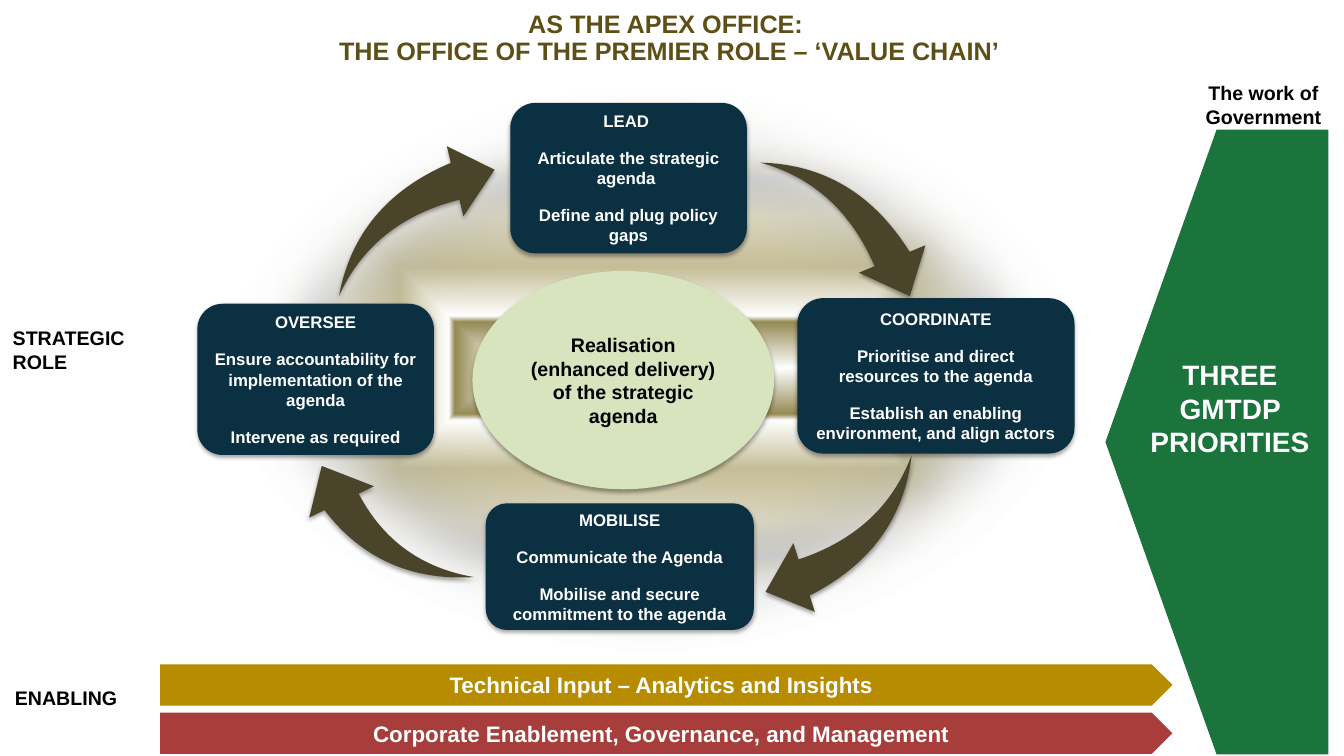
"""Build the value chain slide of the Office of the Premier."""
from dataclasses import dataclass

from lxml import etree
from pptx import Presentation
from pptx import util as u
from pptx.dml.color import RGBColor
from pptx.enum import shapes, text
from pptx.oxml import ns

SHAPE = shapes.MSO_SHAPE
CENTER = text.PP_ALIGN.CENTER
LEFT = text.PP_ALIGN.LEFT


@dataclass(frozen=True)
class Theme:
    font: str = "Arial"
    white: str = "FFFFFF"
    black: str = "000000"
    title: str = "5E4F16"
    role: str = "0B3041"
    goal: str = "D7E4BD"
    arrow: str = "4A452A"
    government: str = "1A743C"
    technical: str = "B88C00"
    corporate: str = "A73E3B"
    role_size: int = 12
    label_size: int = 14
    bar_size: int = 16
    title_size: int = 18
    priority_size: int = 20
    glow: tuple = ((0, "FFFFFF"), (16, "948A54"), (18, "FFFFFF"), (35, "C4BD97"),
                   (53, "DDD9C3"), (66, "CFCFCF"), (69, "DDD9C3"), (79, "FFFFFF"),
                   (97, "C4BD97"))


THEME = Theme()

ROLES = (
    ((141, 217, 169, 108), ("OVERSEE", "Ensure accountability for implementation of the agenda",
                            "Intervene as required")),
    ((364.5, 73.5, 169, 107.5), ("LEAD ", "Articulate the strategic agenda ",
                                 "Define and plug policy gaps")),
    ((569.5, 213, 198, 111), ("COORDINATE", "Prioritise and direct resources to the agenda",
                              "Establish an enabling environment, and align actors")),
    ((347, 359.5, 191.5, 90.5), ("MOBILISE", "Communicate the Agenda",
                                 "Mobilise and secure commitment to the agenda")),
)

ARROWS = (
    ((546, 112.5, 121, 97), 254),
    ((540.5, 335.5, 121, 97), 349.1),
    ((236, 107.5, 121, 97), 173.2),
    ((219, 327.5, 111, 97), 70.6),
)

BARS = (
    (474.5, THEME.technical, "Technical Input – Analytics and Insights"),
    (509, THEME.corporate, "Corporate Enablement, Governance, and Management"),
)


def points(place):
    return [u.Pt(length) for length in place]


def add_element(parent, tag, **attributes):
    element = etree.SubElement(parent, ns.qn(tag))
    for name, value in attributes.items():
        element.set(name, str(value))
    return element


def add_color(parent, color, alpha=None):
    element = add_element(parent, "a:srgbClr", val=color)
    if alpha is not None:
        add_element(element, "a:alpha", val=alpha * 1000)


def add_shadow(shape, alpha=35, blur=3.1, distance=1.8):
    effects = shape._element.spPr.find(ns.qn("a:effectLst"))
    shadow = add_element(effects, "a:outerShdw", blurRad=u.Pt(blur), dist=u.Pt(distance),
                         dir=5400000, rotWithShape=0)
    add_color(shadow, THEME.black, alpha)
    return effects


def add_block(page, kind, place, color):
    shape = page.shapes.add_shape(kind, *points(place))
    shape.shadow.inherit = False
    shape.fill.solid()
    shape.fill.fore_color.rgb = RGBColor.from_string(color)
    shape.line.fill.background()
    return shape


def write(shape, lines, size, color, align=CENTER, after=0):
    frame = shape.text_frame
    frame.word_wrap = True
    for index, line in enumerate(lines):
        para = frame.paragraphs[0] if index == 0 else frame.add_paragraph()
        para.alignment = align
        para.space_after = u.Pt(after)
        for part, words in enumerate(line.split("\n")):
            if part:
                para.add_line_break()
            span = para.add_run()
            span.text = words
            span.font.name = THEME.font
            span.font.size = u.Pt(size)
            span.font.bold = True
            span.font.color.rgb = RGBColor.from_string(color)
    return frame


def add_label(page, place, lines, size=THEME.label_size, color=THEME.black, align=LEFT):
    box = page.shapes.add_textbox(*points(place))
    return write(box, lines, size, color, align)


def add_title(page):
    frame = add_label(page, (-2, 5, 960, 35),
                      ["AS THE APEX OFFICE: \nTHE OFFICE OF THE PREMIER ROLE – ‘VALUE CHAIN’"],
                      THEME.title_size, THEME.title, CENTER)
    frame.margin_left = frame.margin_right = 0
    frame.paragraphs[0].line_spacing = 0.9


def add_glow(page):
    glow = add_block(page, SHAPE.OVAL, (152, 57, 628, 412), THEME.white)
    glow.line.color.rgb = RGBColor.from_string(THEME.white)
    glow.line.width = u.Pt(2)
    properties = glow._element.spPr
    gradient = etree.Element(ns.qn("a:gradFill"), rotWithShape="1")
    stops = add_element(gradient, "a:gsLst")
    for position, color in THEME.glow:
        add_color(add_element(stops, "a:gs", pos=position * 1000), color)
    route = add_element(gradient, "a:path", path="shape")
    add_element(route, "a:fillToRect", l=50000, t=50000, r=50000, b=50000)
    properties.replace(properties.find(ns.qn("a:solidFill")), gradient)
    effects = add_shadow(glow, 40, 4, 3)
    add_element(effects, "a:softEdge", rad=u.Pt(50))


def add_goal(page):
    goal = add_block(page, SHAPE.OVAL, (337.5, 193.5, 215.5, 156), THEME.goal)
    add_shadow(goal)
    write(goal, ["Realisation (enhanced delivery) of the strategic agenda"],
          THEME.label_size, THEME.black, after=12)


def add_role(page, place, lines):
    role = add_block(page, SHAPE.ROUNDED_RECTANGLE, place, THEME.role)
    add_shadow(role)
    write(role, lines, THEME.role_size, THEME.white, after=12)


def add_arrow(page, place, angle):
    arrow = add_block(page, SHAPE.SWOOSH_ARROW, place, THEME.arrow)
    arrow.adjustments[0] = 0.277
    arrow.adjustments[1] = 0.314
    arrow.rotation = angle
    for flip in ("flipH", "flipV"):
        arrow._element.spPr.xfrm.set(flip, "1")
    add_shadow(arrow)


def add_government(page):
    plate = add_block(page, SHAPE.PENTAGON, (790, 93, 158.5, 445.5), THEME.government)
    plate.rotation = 180
    plate.line.color.rgb = RGBColor.from_string(THEME.government)
    plate.line.width = u.Pt(0.75)
    add_label(page, (812, 252, 133, 80), ["THREE GMTDP PRIORITIES"],
              THEME.priority_size, THEME.white, CENTER)
    add_label(page, (846, 54.5, 113, 41), ["The work of Government"], align=CENTER)


def add_bar(page, top, color, words):
    bar = add_block(page, SHAPE.PENTAGON, (114.5, top, 723, 29.5), color)
    write(bar, [words], THEME.bar_size, THEME.white)


def main():
    deck = Presentation()
    deck.slide_width, deck.slide_height = points((960, 540))
    page = deck.slides.add_slide(deck.slide_layouts[6])
    add_glow(page)
    add_goal(page)
    for place, lines in ROLES:
        add_role(page, place, lines)
    for place, angle in ARROWS:
        add_arrow(page, place, angle)
    add_title(page)
    add_government(page)
    add_label(page, (2, 229.5, 150, 41), ["STRATEGIC", "ROLE"])
    add_label(page, (3.5, 486.5, 111, 24.5), ["ENABLING"])
    for top, color, words in BARS:
        add_bar(page, top, color, words)
    deck.save("out.pptx")


if __name__ == "__main__":
    main()
